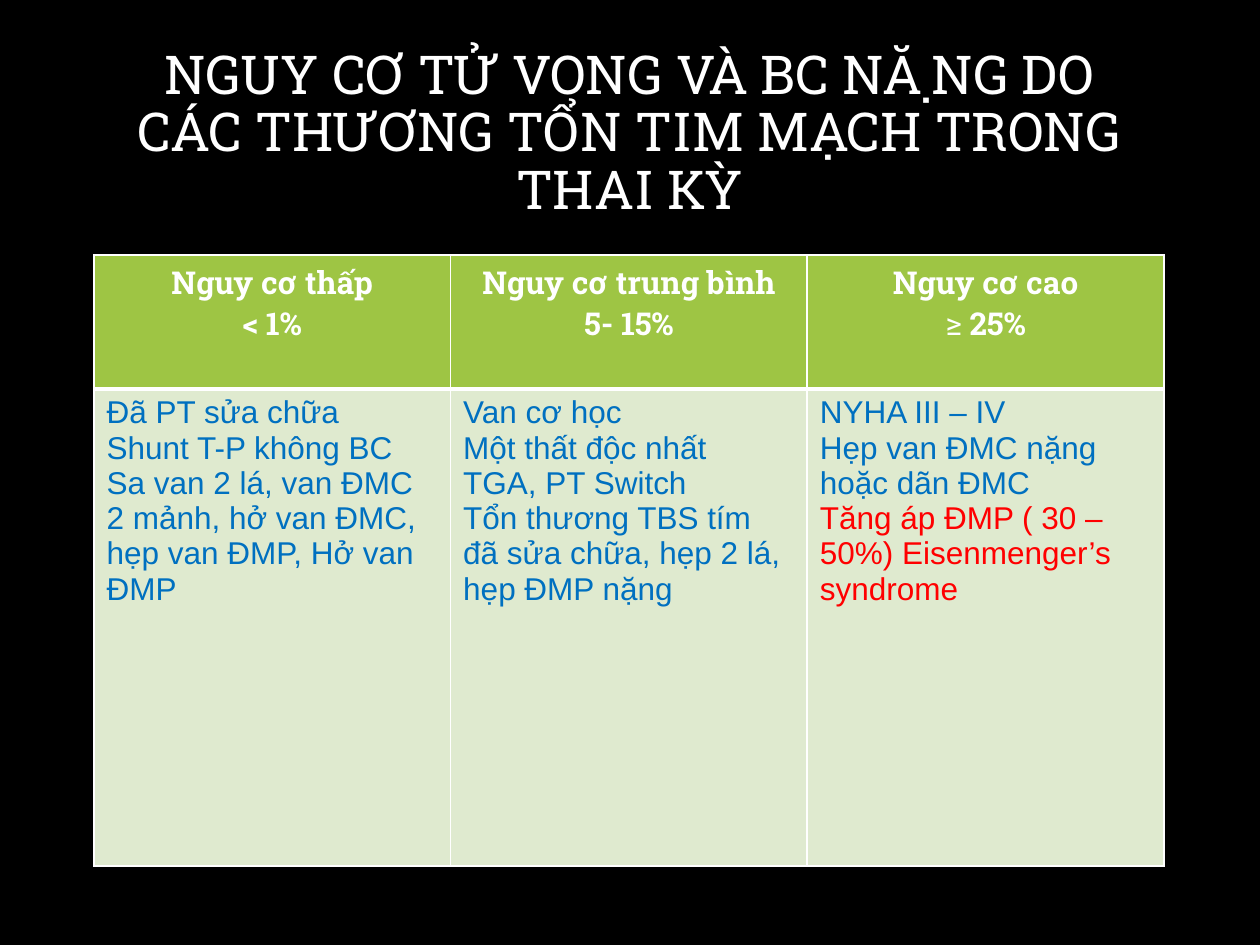
import pptx
import pptx.dml.color
import pptx.enum.text
import pptx.oxml
import pptx.oxml.ns
import pptx.util

EMU_PER_PX = 914400 // 126
BLACK = pptx.dml.color.RGBColor(0x00, 0x00, 0x00)
WHITE = pptx.dml.color.RGBColor(0xFF, 0xFF, 0xFF)
GREEN = pptx.dml.color.RGBColor(0x9E, 0xC5, 0x44)
PALE_GREEN = pptx.dml.color.RGBColor(0xDF, 0xEA, 0xCF)
BLUE = pptx.dml.color.RGBColor(0x00, 0x70, 0xC0)
RED = pptx.dml.color.RGBColor(0xFF, 0x00, 0x00)
HEADING_FONT = "Roboto Slab"
BODY_FONT = "Arial"
CENTER = pptx.enum.text.PP_ALIGN.CENTER

# Vietnamese tone marks: toned letters and the letters that carry the mark
TONES = [
    ("\N{COMBINING GRAVE ACCENT}", "ÀỲì", "AYi"),
    ("\N{COMBINING ACUTE ACCENT}", "Ááấí", "Aaâi"),
    ("\N{COMBINING HOOK ABOVE}", "ỬỔửảởổ", "ƯÔưaơô"),
    ("\N{COMBINING TILDE}", "ãữ", "aư"),
    ("\N{COMBINING DOT BELOW}", "ẶẠẹọộặ", "ĂAeoôă"),
]
TONE_TABLE = {ord(toned): base + mark for mark, toned_letters, bases in TONES
              for toned, base in zip(toned_letters, bases)}

TITLE = "NGUY CƠ TỬ VONG VÀ BC NẶNG DO CÁC THƯƠNG TỔN TIM MẠCH TRONG THAI KỲ"
# Each risk group: name, sign before the rate, rate, conditions with their colour
RISK_GROUPS = [
    ("Nguy cơ thấp", "", "< 1%", [
        ("Đã PT sửa chữa", BLUE),
        ("Shunt T-P không BC", BLUE),
        ("Sa van 2 lá, van ĐMC 2 mảnh, hở van ĐMC, hẹp van ĐMP, Hở van ĐMP", BLUE),
    ]),
    ("Nguy cơ trung bình", "", "5- 15%", [
        ("Van cơ học", BLUE),
        ("Một thất độc nhất", BLUE),
        ("TGA, PT Switch", BLUE),
        ("Tổn thương TBS tím đã sửa chữa, hẹp 2 lá, hẹp ĐMP nặng", BLUE),
    ]),
    ("Nguy cơ cao", "≥ ", "25%", [
        ("NYHA III – IV", BLUE),
        ("Hẹp van ĐMC nặng hoặc dãn ĐMC", BLUE),
        ("Tăng áp ĐMP ( 30 – 50%) Eisenmenger’s syndrome", RED),
    ]),
]


def px(length):
    return pptx.util.Emu(length * EMU_PER_PX)


def add_text(paragraph, text, bold=False):
    """Add a run, with tone marks typed after their letters."""
    run = paragraph.add_run()
    run.text = text.translate(TONE_TABLE)
    run.font.bold = bold


def style(paragraph, font_name, size, color, align=None):
    paragraph.font.name = font_name
    paragraph.font.size = pptx.util.Pt(size)
    paragraph.font.color.rgb = color
    paragraph.alignment = align


def add_title(slide):
    frame = slide.shapes.add_textbox(px(94), px(43), px(1070), px(183)).text_frame
    frame.word_wrap = True
    frame.vertical_anchor = pptx.enum.text.MSO_ANCHOR.MIDDLE
    heading = frame.paragraphs[0]
    add_text(heading, TITLE)
    style(heading, HEADING_FONT, 30.6, WHITE, CENTER)
    heading.line_spacing = 0.9


def set_borders(cell, top, bottom):
    """Draw white borders; top and bottom are widths in points."""
    properties = cell._tc.get_or_add_tcPr()
    sides = [("lnL", 1), ("lnR", 1), ("lnT", top), ("lnB", bottom)]
    for position, (side, width) in enumerate(sides):
        properties.insert(position, pptx.oxml.parse_xml(
            f'<a:{side} {pptx.oxml.ns.nsdecls("a")} w="{pptx.util.Pt(width)}">'
            f'<a:solidFill><a:srgbClr val="{WHITE}"/></a:solidFill></a:{side}>'))


def paint(cell, color, top, bottom):
    cell.fill.solid()
    cell.fill.fore_color.rgb = color
    set_borders(cell, top, bottom)


def fill_header(cell, name, sign, rate):
    paint(cell, GREEN, 1, 3)
    name_line = cell.text_frame.paragraphs[0]
    rate_line = cell.text_frame.add_paragraph()
    for line in (name_line, rate_line):
        style(line, HEADING_FONT, 18, WHITE, CENTER)
    add_text(name_line, name, True)
    if sign:
        add_text(rate_line, sign)
    add_text(rate_line, rate, True)


def fill_conditions(cell, conditions):
    paint(cell, PALE_GREEN, 3, 1)
    frame = cell.text_frame
    for index, (text, color) in enumerate(conditions):
        line = frame.add_paragraph() if index else frame.paragraphs[0]
        add_text(line, text)
        style(line, BODY_FONT, 18, color)


def add_risk_table(slide):
    table = slide.shapes.add_table(
        2, len(RISK_GROUPS), px(94), px(255), px(1070), px(611)).table
    table.horz_banding = False
    table.rows[0].height = px(134)
    table.rows[1].height = px(477)
    for column, (name, sign, rate, conditions) in enumerate(RISK_GROUPS):
        fill_header(table.cell(0, column), name, sign, rate)
        fill_conditions(table.cell(1, column), conditions)


def main():
    deck = pptx.Presentation()
    deck.slide_width = pptx.util.Inches(10)
    deck.slide_height = pptx.util.Inches(7.5)
    slide = deck.slides.add_slide(deck.slide_layouts[6])
    slide.background.fill.solid()
    slide.background.fill.fore_color.rgb = BLACK
    add_title(slide)
    add_risk_table(slide)
    deck.save("out.pptx")


if __name__ == "__main__":
    main()
